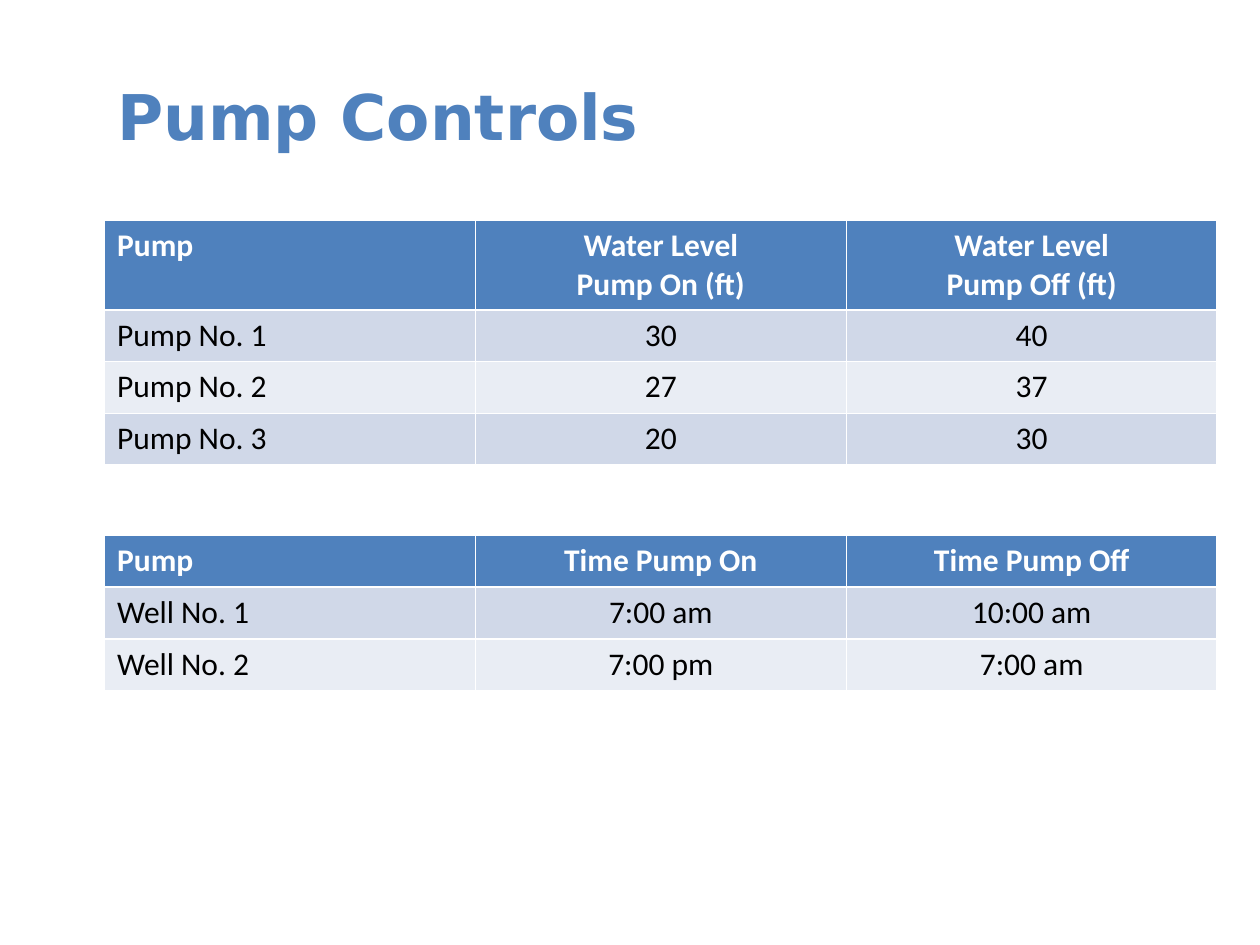
from pptx import Presentation
from pptx import util as u
from pptx.dml import color
from pptx.enum import text


def paint(target, hex_string):
    target.rgb = color.RGBColor.from_string(hex_string)


def format_font(font, name, size, hex_string, bold):
    font.name, font.size, font.bold = name, u.Pt(size), bold
    paint(font.color, hex_string)


presentation = Presentation()
presentation.slide_width, presentation.slide_height = u.Inches(10), u.Inches(7.5)
slide = presentation.slides.add_slide(presentation.slide_layouts[5])

left, width = u.Inches(0.83), u.Inches(8.83)
row_height = u.Inches(0.41)

title = slide.shapes.title
title.left, title.top, title.width, title.height = left, u.Inches(0.29), width, u.Inches(1.25)
title.text_frame.text = "Pump Controls"
title.text_frame.vertical_anchor = text.MSO_ANCHOR.MIDDLE
heading = title.text_frame.paragraphs[0]
heading.alignment = text.PP_ALIGN.LEFT
format_font(heading.font, "DejaVu Sans", 36, "4F81BD", True)

level_controls = [
    ("Pump", "Water Level\nPump On (ft)", "Water Level\nPump Off (ft)"),
    ("Pump No. 1", "30", "40"),
    ("Pump No. 2", "27", "37"),
    ("Pump No. 3", "20", "30"),
]
time_controls = [
    ("Pump", "Time Pump On", "Time Pump Off"),
    ("Well No. 1", "7:00 am", "10:00 am"),
    ("Well No. 2", "7:00 pm", "7:00 am"),
]

for top, rows in ((1.75, level_controls), (4.25, time_controls)):
    table = slide.shapes.add_table(
        len(rows), len(rows[0]), left, u.Inches(top), width, row_height * len(rows)
    ).table
    for row_index, row in enumerate(rows):
        is_header = row_index == 0
        band = "4F81BD" if is_header else ("E9EDF4", "D0D8E8")[row_index % 2]
        for column_index, value in enumerate(row):
            cell = table.cell(row_index, column_index)
            cell.text = value
            cell.fill.solid()
            paint(cell.fill.fore_color, band)
            for paragraph in cell.text_frame.paragraphs:
                paragraph.alignment = text.PP_ALIGN.CENTER if column_index else text.PP_ALIGN.LEFT
                format_font(paragraph.font, "Calibri", 18, "FFFFFF" if is_header else "000000", is_header)

presentation.save("out.pptx")
